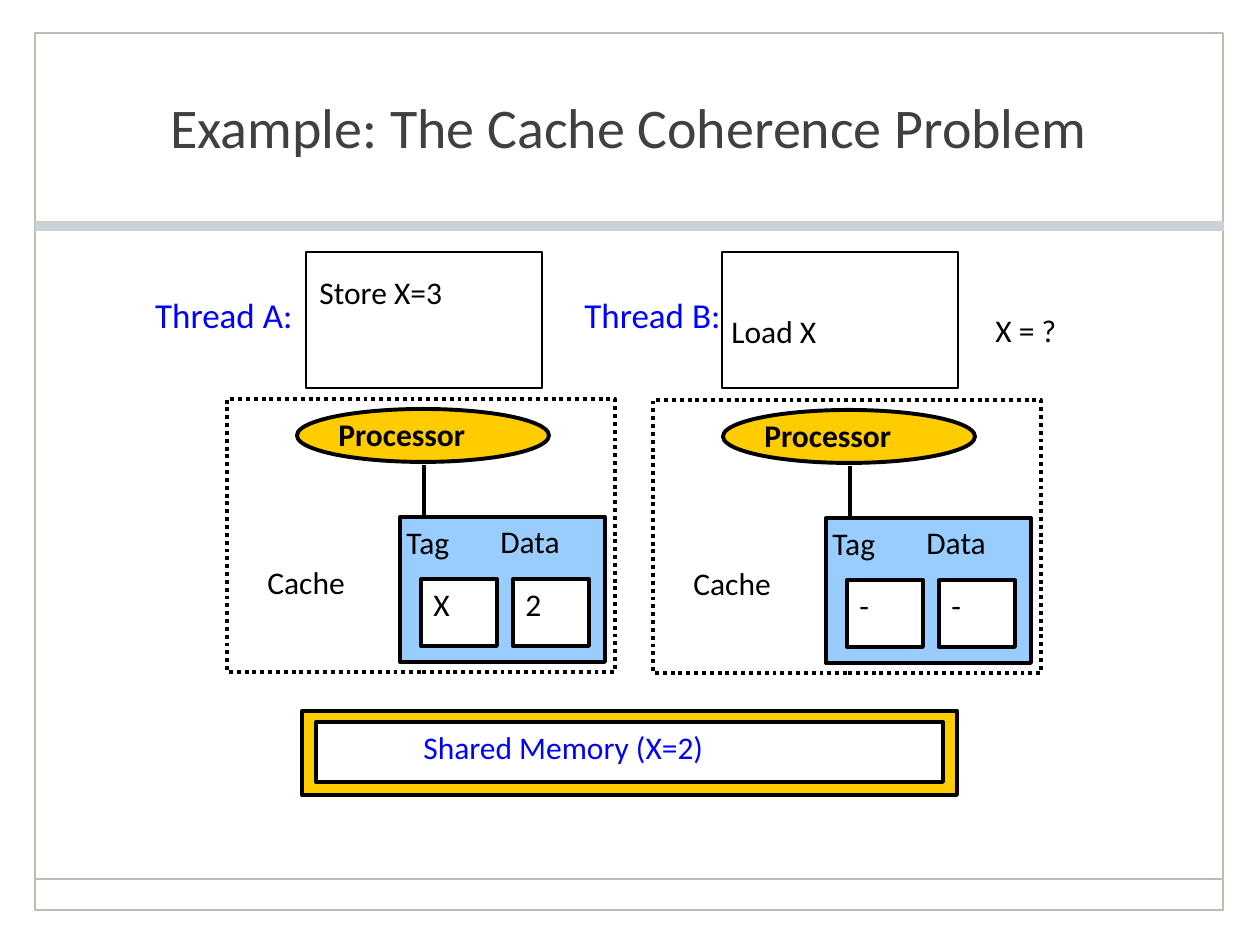
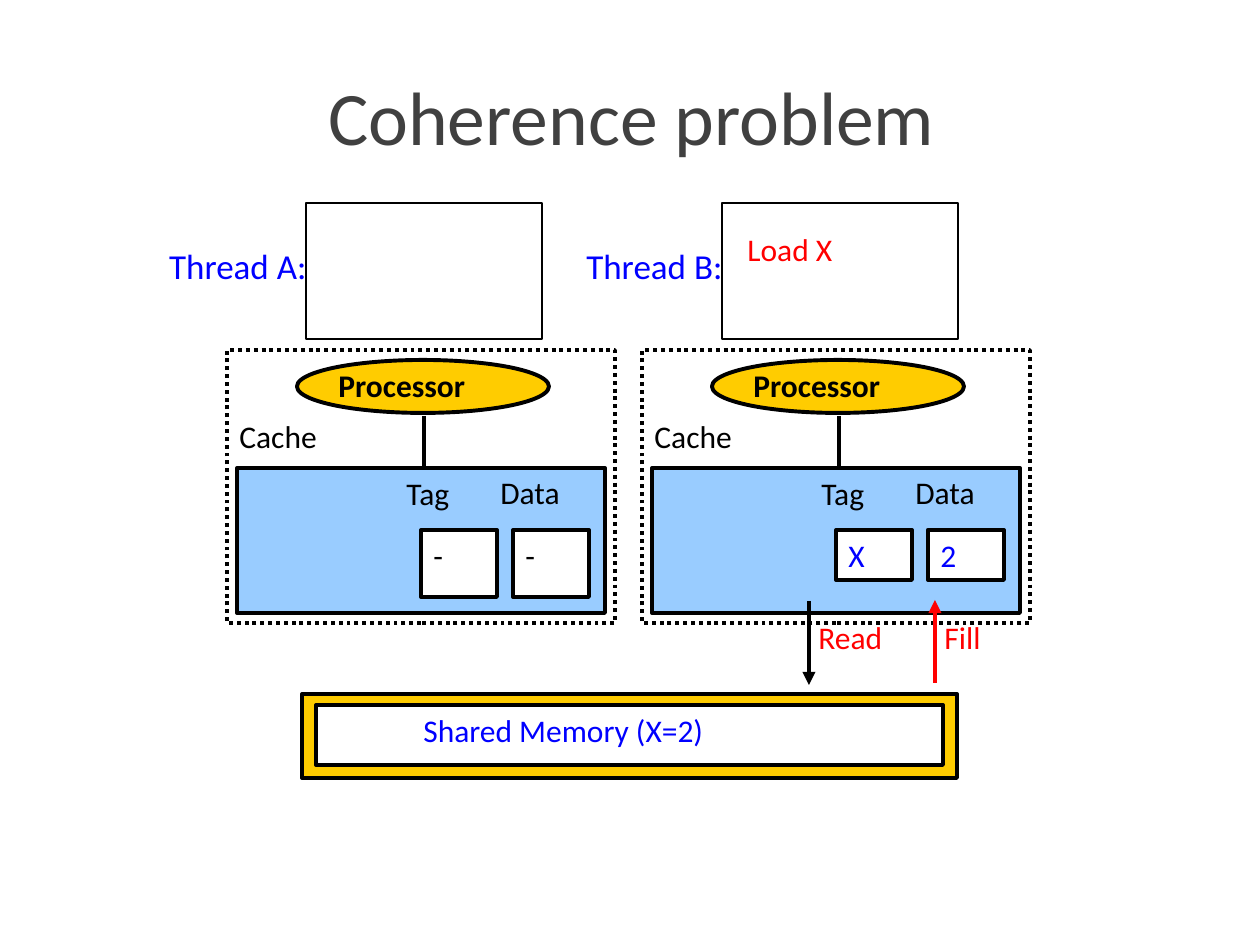
from lxml import etree
from pptx import Presentation
from pptx.dml.color import RGBColor
from pptx.enum.dml import MSO_LINE_DASH_STYLE as DASH
from pptx.enum.shapes import MSO_CONNECTOR, MSO_SHAPE
from pptx.enum.text import MSO_ANCHOR, MSO_AUTO_SIZE, PP_ALIGN
from pptx.oxml.ns import qn
from pptx.util import Emu, Pt

PX = 914400 / 126
FONT = "Calibri"
BLACK = RGBColor(0x00, 0x00, 0x00)
WHITE = RGBColor(0xFF, 0xFF, 0xFF)
BLUE = RGBColor(0x00, 0x00, 0xFF)
RED = RGBColor(0xFF, 0x00, 0x00)
GOLD = RGBColor(0xFF, 0xCC, 0x00)
SKY = RGBColor(0x99, 0xCC, 0xFF)
INK = RGBColor(0x40, 0x40, 0x40)
BORDER = RGBColor(0xBE, 0xBD, 0xB2)
BAR = RGBColor(0xCB, 0xD2, 0xD5)
BAR_EDGE = RGBColor(0xD1, 0xD0, 0xC8)

MEMORY = "Shared Memory (X=2)"
CODE_X = (306, 722)
CACHE_RIGHT = 378

SLIDES = [
    dict(
        title="Example: The Cache Coherence Problem",
        title_box=(123, 34, 1012, 185), title_size=32, framed=True,
        code_y=252, memory_y=711, cache_label=(28, 158), cache_left=173,
        threads=[
            dict(name="Thread A:", name_right=305, node=(227, 399),
                 cells="X2", color=BLACK, cell_height=67),
            dict(name="Thread B:", name_right=733, node=(653, 400),
                 cells="--", color=BLACK, cell_height=67),
        ],
        notes=[("Store X=3", 307, 267, BLACK), ("Load X", 719, 306, BLACK),
               ("X = ?", 983, 305, BLACK)],
        arrows=[],
    ),
    dict(
        title="Coherence problem",
        title_box=(38, 84, 1187, 63), title_size=43.2, framed=False,
        code_y=203, memory_y=694, cache_label=(0, 61), cache_left=10,
        threads=[
            dict(name="Thread A:", name_right=319, node=(227, 350),
                 cells="--", color=BLACK, cell_height=67),
            dict(name="Thread B:", name_right=735, node=(642, 350),
                 cells="X2", color=BLUE, cell_height=50),
        ],
        notes=[("Read", 806, 612, RED), ("Fill", 932, 612, RED),
               ("Load X", 735, 224, RED)],
        arrows=[(809, 601, 685, BLACK), (935, 683, 600, RED)],
    ),
]


def px(*values):
    return [Emu(round(v * PX)) for v in values]


def write(sp, text, color=BLACK, size=18, bold=False,
          align=PP_ALIGN.LEFT, anchor=MSO_ANCHOR.TOP):
    tf = sp.text_frame
    tf.word_wrap = True
    tf.auto_size = MSO_AUTO_SIZE.NONE
    tf.vertical_anchor = anchor
    p = tf.paragraphs[0]
    p.text = text
    p.alignment = align
    p.font.name = FONT
    p.font.size = Pt(size)
    p.font.bold = bold
    p.font.color.rgb = color


def add_box(s, x, y, w, h, fill=None, line=BLACK, width=2.25,
            kind=MSO_SHAPE.RECTANGLE):
    sp = s.shapes.add_shape(kind, *px(x, y, w, h))
    sp.shadow.inherit = False
    if fill is None:
        sp.fill.background()
    else:
        sp.fill.solid()
        sp.fill.fore_color.rgb = fill
    sp.line.color.rgb = line
    sp.line.width = Pt(width)
    return sp


def add_label(s, text, x, y, w=180, h=50, **style):
    write(s.shapes.add_textbox(*px(x, y, w, h)), text, **style)


def add_line(s, x1, y1, x2, y2, color=BLACK, width=2.25, arrow=False):
    cn = s.shapes.add_connector(MSO_CONNECTOR.STRAIGHT, *px(x1, y1, x2, y2))
    cn.line.color.rgb = color
    cn.line.width = Pt(width)
    pr = cn._element.spPr
    if arrow:
        etree.SubElement(pr.find(qn("a:ln")), qn("a:tailEnd"), type="triangle")
    etree.SubElement(pr, qn("a:effectLst"))


def add_title(s, text, box, size):
    sp = s.shapes.title
    sp.left, sp.top, sp.width, sp.height = px(*box)
    write(sp, text, INK, size, align=PP_ALIGN.CENTER, anchor=MSO_ANCHOR.MIDDLE)


def add_page_frame(s):
    add_box(s, 35, 33, 1188, 877, line=BORDER, width=1)
    add_line(s, 35, 879, 1223, 879, BORDER, 1)
    add_box(s, 35, 221, 1188, 9, BAR, BAR_EDGE, 0.25)


def add_memory(s, y):
    add_box(s, 302, y, 655, 84, GOLD)
    add_box(s, 316, y + 11, 627, 60, WHITE)
    add_label(s, MEMORY, 411, y + 11, 440, color=BLUE)


def add_node(s, thread, cache_label, cache_left):
    x, y = thread["node"]
    add_box(s, x, y, 388, 273).line.dash_style = DASH.ROUND_DOT
    add_box(s, x + 70, y + 10, 252, 53, GOLD, kind=MSO_SHAPE.OVAL)
    add_label(s, "Processor", x + 99, y + 10, bold=True, anchor=MSO_ANCHOR.MIDDLE)
    add_line(s, x + 197, y + 66, x + 197, y + 118)
    add_label(s, "Cache", x + cache_label[0], y + cache_label[1], 147)
    add_box(s, x + cache_left, y + 118, CACHE_RIGHT - cache_left, 145, SKY)
    add_label(s, "Tag", x + 167, y + 118, 122)
    add_label(s, "Data", x + 261, y + 117, 122)
    for i, value in enumerate(thread["cells"]):
        cell = add_box(s, x + 194 + 92 * i, y + 180, 76, thread["cell_height"], WHITE)
        write(cell, value, thread["color"])


def add_diagram(s, d):
    for thread, code_x in zip(d["threads"], CODE_X):
        add_box(s, code_x, d["code_y"], 236, 136, width=1)
        add_label(s, thread["name"], thread["name_right"] - 180, d["code_y"] + 35,
                  color=BLUE, size=20, align=PP_ALIGN.RIGHT)
        add_node(s, thread, d["cache_label"], d["cache_left"])
    add_memory(s, d["memory_y"])
    for x, start, end, color in d["arrows"]:
        add_line(s, x, start, x, end, color, 2.5, arrow=True)
    for text, x, y, color in d["notes"]:
        add_label(s, text, x, y, color=color)


def main():
    prs = Presentation()
    prs.slide_width, prs.slide_height = px(1260, 945)
    for d in SLIDES:
        s = prs.slides.add_slide(prs.slide_layouts[5])
        add_title(s, d["title"], d["title_box"], d["title_size"])
        if d["framed"]:
            add_page_frame(s)
        add_diagram(s, d)
    prs.save("out.pptx")


if __name__ == "__main__":
    main()
